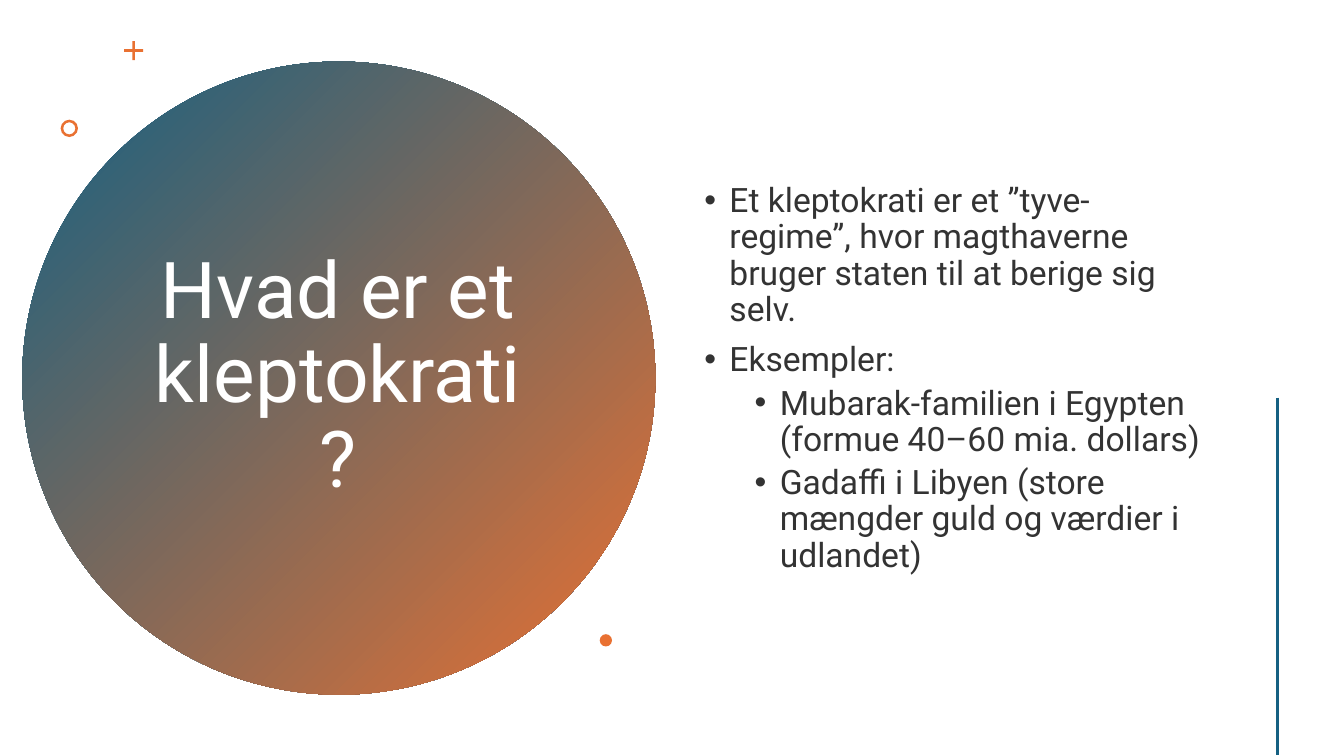
from lxml import etree
from pptx import Presentation
from pptx.dml.color import RGBColor
from pptx.enum.shapes import MSO_CONNECTOR, MSO_SHAPE
from pptx.enum.text import MSO_ANCHOR, MSO_AUTO_SIZE, PP_ALIGN
from pptx.oxml.ns import qn
from pptx.util import Pt

OVAL, CROSS, RING = MSO_SHAPE.OVAL, MSO_SHAPE.CROSS, MSO_SHAPE.DONUT
STRAIGHT = MSO_CONNECTOR.STRAIGHT
MIDDLE, CENTER, FIXED = MSO_ANCHOR.MIDDLE, PP_ALIGN.CENTER, MSO_AUTO_SIZE.NONE
FONT = "Roboto"
COLORS = {"blue": "156082", "orange": "E97132", "white": "FFFFFF", "text": "333333"}
POINTS = [
    (0, "Et kleptokrati er et ”tyve-regime”, hvor magthaverne bruger staten til at berige sig selv."),
    (0, "Eksempler:"),
    (1, "Mubarak-familien i Egypten (formue 40–60 mia. dollars)"),
    (1, "Gadaffi i Libyen (store mængder guld og værdier i udlandet)"),
]


def color(name):
    """Return the named colour."""
    return RGBColor.from_string(COLORS[name])


def style(para, size, name):
    """Set the font and line spacing of a paragraph."""
    para.line_spacing = 0.9
    para.font.name = FONT
    para.font.size = Pt(size)
    para.font.color.rgb = color(name)


def add_mark(slide, kind, x, y, size, adjust=None):
    """Add a small orange ornament."""
    mark = slide.shapes.add_shape(kind, Pt(x), Pt(y), Pt(size), Pt(size))
    mark.shadow.inherit = False
    mark.fill.solid()
    mark.fill.fore_color.rgb = color("orange")
    mark.line.fill.background()
    if adjust is not None:
        mark.adjustments[0] = adjust


def add_disc(slide, x, y, size):
    """Add the gradient disc with the title and its ornaments."""
    disc = slide.shapes.add_shape(OVAL, Pt(x), Pt(y), Pt(size), Pt(size))
    disc.shadow.inherit = False
    disc.line.fill.background()
    disc.fill.gradient()
    disc.fill.gradient_angle = 315
    for stop, name in zip(disc.fill.gradient_stops, ("blue", "orange")):
        stop.color.rgb = color(name)

    title = slide.shapes.title
    title.element.addprevious(disc.element)
    title.left, title.top = Pt(x + 82), Pt(y + 57.5)
    title.width, title.height = Pt(287.3), Pt(336.2)
    frame = title.text_frame
    frame.text = "Hvad er et kleptokrati?"
    frame.word_wrap = True
    frame.auto_size = FIXED
    frame.vertical_anchor = MIDDLE
    para = frame.paragraphs[0]
    para.alignment = CENTER
    style(para, 56, "white")

    add_mark(slide, CROSS, x + 72.7, y - 14.7, 13.7, 0.43)
    add_mark(slide, RING, x + 27.4, y + 41.5, 12.4, 0.15)
    add_mark(slide, OVAL, x + 412.5, y + 409, 8.8)


def add_points(slide, x, y, width, height):
    """Add the bulleted text."""
    frame = slide.shapes.add_textbox(Pt(x), Pt(y), Pt(width), Pt(height)).text_frame
    frame.word_wrap = True
    frame.vertical_anchor = MIDDLE
    for i, (level, text) in enumerate(POINTS):
        para = frame.paragraphs[0] if i == 0 else frame.add_paragraph()
        para.text = text
        para.level = level
        props = para._p.get_or_add_pPr()
        props.set("marL", str(Pt(18 + 36 * level)))
        props.set("indent", str(Pt(-18)))
        etree.SubElement(props, qn("a:buFont"), typeface="Arial")
        etree.SubElement(props, qn("a:buChar"), char="•")
        if i:
            para.space_before = Pt(5 if level else 10)
        style(para, 24, "text")


def add_rule(slide, x, top, bottom):
    """Add the upright line at the right."""
    rule = slide.shapes.add_connector(STRAIGHT, Pt(x), Pt(top), Pt(x), Pt(bottom))
    rule.line.color.rgb = color("blue")
    rule.line.width = Pt(2)
    etree.SubElement(rule.element.spPr, qn("a:effectLst"))


def main():
    """Build and save the slide."""
    deck = Presentation()
    deck.slide_width, deck.slide_height = Pt(960), Pt(540)
    slide = deck.slides.add_slide(deck.slide_layouts.get_by_name("Title Only"))
    add_disc(slide, 15.9, 44, 452.2)
    add_points(slide, 496, 41, 376, 459.4)
    add_rule(slide, 912.3, 284, 539.5)
    deck.save("out.pptx")


if __name__ == "__main__":
    main()
